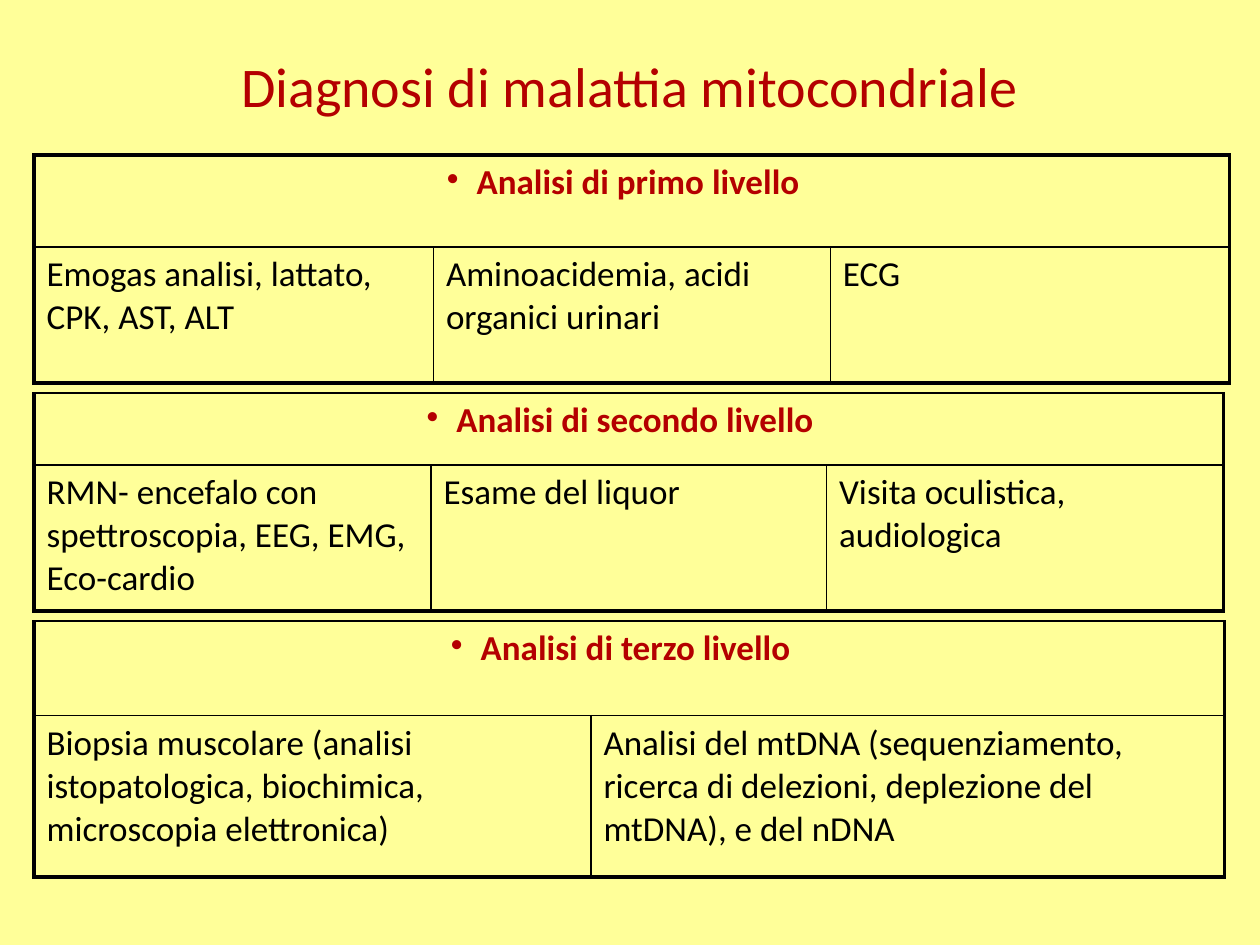
"""Build the slide on the three levels of mitochondrial disease diagnosis."""
from dataclasses import dataclass

from lxml.etree import SubElement
from pptx import Presentation
from pptx.dml.color import RGBColor
from pptx.enum.text import MSO_ANCHOR, PP_ALIGN
from pptx.oxml.ns import qn
from pptx.util import Inches, Pt


@dataclass(frozen=True)
class Theme:
    font: str = "Calibri"
    background: str = "FFFF99"
    accent: str = "B40000"
    ink: str = "000000"
    title_size: float = 32
    body_size: float = 20
    thick: float = 2.25
    thin: float = 1


@dataclass(frozen=True)
class Level:
    heading: str
    tests: tuple[str, ...]
    top: float
    columns: tuple[float, ...]
    rows: tuple[float, float]
    top_line: float


THEME = Theme()
WIDTH, HEIGHT = Inches(10), Inches(7.5)
LEFT = 2.7
LEVELS = (
    Level("Analisi di primo livello",
          ("Emogas analisi, lattato, CPK, AST, ALT",
           "Aminoacidemia, acidi organici urinari", "ECG"),
          16.4, (31.7, 31.5, 31.7), (9.73, 14.4), THEME.thick),
    Level("Analisi di terzo livello",
          ("Biopsia muscolare (analisi istopatologica, biochimica, microscopia elettronica)",
           "Analisi del mtDNA (sequenziamento, ricerca di delezioni, deplezione del mtDNA), e del nDNA"),
          65.73, (44.2, 50.3), (10, 17.07), THEME.thin),
    Level("Analisi di secondo livello",
          ("RMN- encefalo con spettroscopia, EEG, EMG, Eco-cardio",
           "Esame del liquor", "Visita oculistica, audiologica"),
          41.6, (31.5, 31.4, 31.5), (7.6, 15.47), THEME.thin),
)


def across(share: float) -> int:
    """Return a percentage of the slide width."""
    return round(WIDTH * share / 100)


def down(share: float) -> int:
    """Return a percentage of the slide height."""
    return round(HEIGHT * share / 100)


def format_text(p, size: float, color: str, bold: bool = False) -> None:
    """Format every run of a paragraph."""
    for r in p.runs:
        r.font.name = THEME.font
        r.font.size = Pt(size)
        r.font.bold = bold
        r.font.color.rgb = RGBColor.from_string(color)


def set_borders(cell, left: float, right: float, top: float, bottom: float) -> None:
    """Draw the four cell borders at the given widths in points."""
    tc_pr = cell._tc.get_or_add_tcPr()
    for side, width in zip("LRTB", (left, right, top, bottom)):
        ln = SubElement(tc_pr, qn(f"a:ln{side}"), w=str(Pt(width)))
        fill = SubElement(ln, qn("a:solidFill"))
        SubElement(fill, qn("a:srgbClr"), val=THEME.ink)


def fill_cell(cell, text: str, heading: bool) -> None:
    """Write a cell as a centred bulleted heading or as plain text."""
    p = cell.text_frame.paragraphs[0]
    p.text = text
    p.alignment = PP_ALIGN.CENTER if heading else PP_ALIGN.LEFT
    format_text(p, THEME.body_size, THEME.accent if heading else THEME.ink, heading)
    p_pr = p._p.get_or_add_pPr()
    SubElement(SubElement(p_pr, qn("a:spcBef")), qn("a:spcPct"), val="20000")
    if heading:
        SubElement(p_pr, qn("a:buFontTx"))
        SubElement(p_pr, qn("a:buChar"), char="•")


def add_level(s, level: Level) -> None:
    """Add the table of one diagnostic level."""
    count = len(level.columns)
    table = s.shapes.add_table(2, count, across(LEFT), down(level.top),
                               across(sum(level.columns)), down(sum(level.rows))).table
    table.first_row = table.horz_banding = False
    for column, share in zip(table.columns, level.columns):
        column.width = across(share)
    for row, share in zip(table.rows, level.rows):
        row.height = down(share)
    table.cell(0, 0).merge(table.cell(0, count - 1))
    fill_cell(table.cell(0, 0), level.heading, True)
    for i, test in enumerate(level.tests):
        head, body = table.cell(0, i), table.cell(1, i)
        fill_cell(body, test, False)
        set_borders(head, THEME.thick, THEME.thick, level.top_line, THEME.thin)
        set_borders(body, THEME.thick if i == 0 else THEME.thin,
                    THEME.thick if i == count - 1 else THEME.thin,
                    THEME.thin, THEME.thick)
        for cell in (head, body):
            cell.fill.background()


def add_title(s, text: str) -> None:
    """Place and format the title placeholder."""
    sp = s.shapes.title
    sp.left, sp.top = across(5), down(0.67)
    sp.width, sp.height = across(90), down(16.67)
    tf = sp.text_frame
    tf.text = text
    tf.word_wrap = True
    tf.vertical_anchor = MSO_ANCHOR.MIDDLE
    p = tf.paragraphs[0]
    p.alignment = PP_ALIGN.CENTER
    format_text(p, THEME.title_size, THEME.accent)


def main() -> None:
    """Build and save the presentation."""
    prs = Presentation()
    prs.slide_width, prs.slide_height = WIDTH, HEIGHT
    s = prs.slides.add_slide(prs.slide_layouts[5])
    s.background.fill.solid()
    s.background.fill.fore_color.rgb = RGBColor.from_string(THEME.background)
    add_title(s, "Diagnosi di malattia mitocondriale")
    for level in LEVELS:
        add_level(s, level)
    prs.save("out.pptx")


if __name__ == "__main__":
    main()
